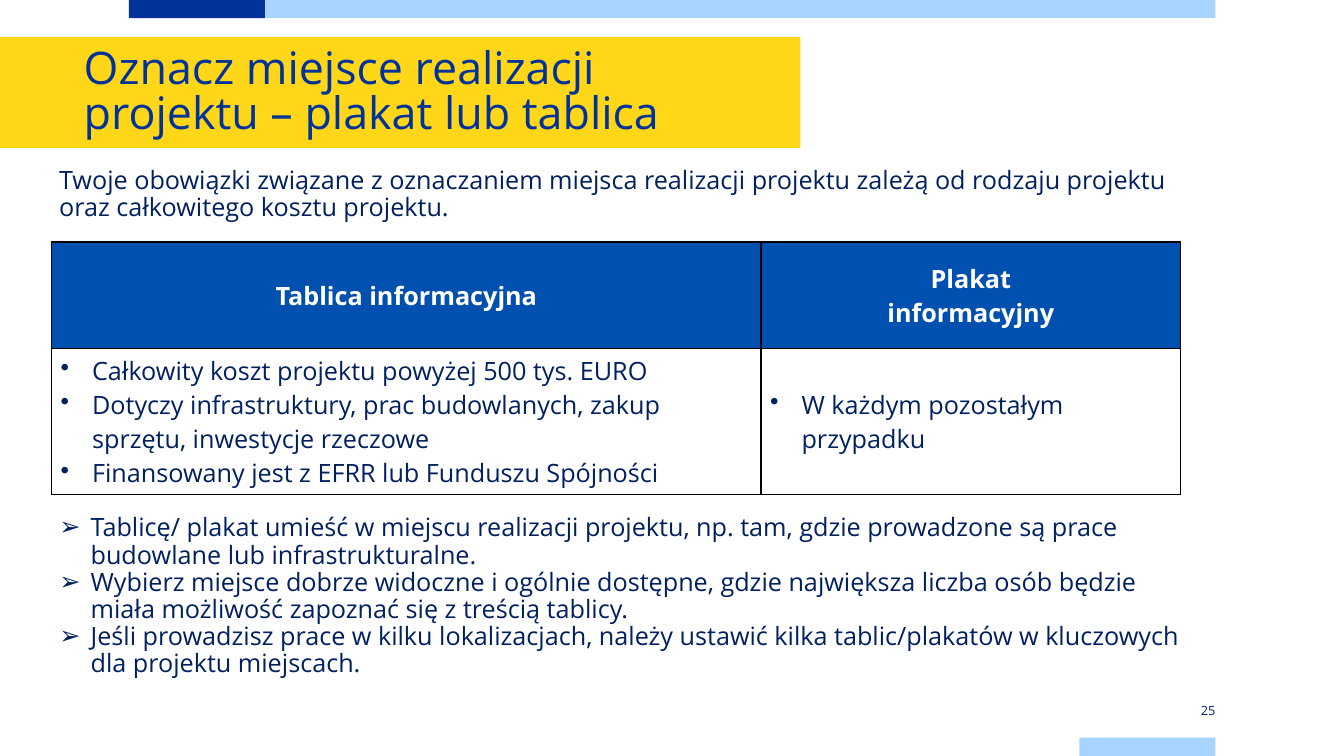
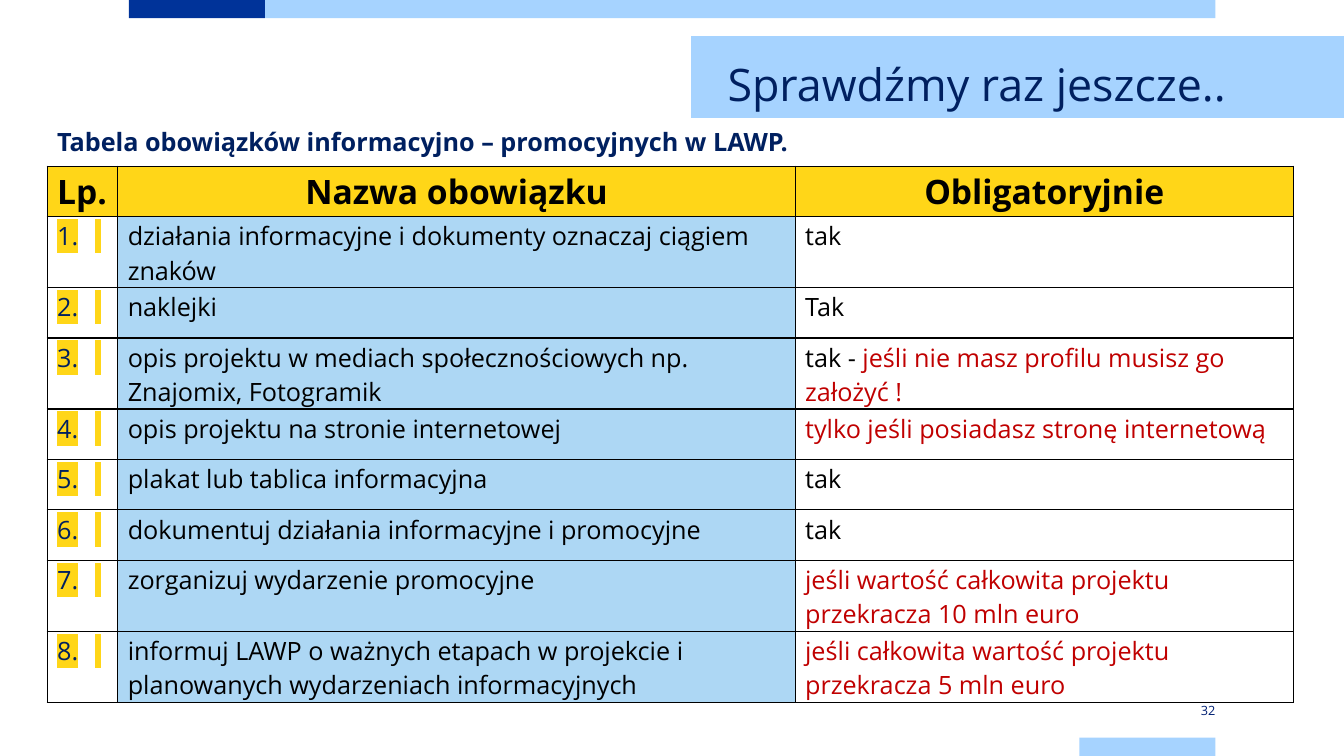
import pptx
import pptx.dml.color
import pptx.enum.shapes
import pptx.enum.text
import pptx.oxml
import pptx.oxml.ns
import pptx.util
import lxml.etree

Cm, Pt = pptx.util.Cm, pptx.util.Pt
qn = pptx.oxml.ns.qn
ALIGN = pptx.enum.text.PP_ALIGN
ANCHOR = pptx.enum.text.MSO_ANCHOR

FONT = "Open Sans"
COLOURS = {
    "blue": "003399", "sky": "A6D3FF", "yellow": "FFD618", "navy": "002060",
    "header": "0050B0", "pale": "ADD7F4", "red": "C00000", "number": "002073",
    "white": "FFFFFF", "black": "000000",
}
HANGING = Cm(0.79)
TITLE_ONLY, TITLE_AND_BODY = 5, 1


def rgb(name):
    return pptx.dml.color.RGBColor.from_string(COLOURS[name])


def place(shape, box):
    shape.left, shape.top, shape.width, shape.height = (Cm(v) for v in box)


def hang(paragraph, tag, indent=HANGING, **attributes):
    """Give the paragraph a bullet or number with a hanging indent."""
    properties = paragraph._p.get_or_add_pPr()
    properties.set("marL", str(indent))
    properties.set("indent", str(-indent))
    lxml.etree.SubElement(properties, qn(tag), attributes)


def write(frame, paragraphs, size=18, colour="navy", bold=False, align=ALIGN.LEFT,
          anchor=ANCHOR.TOP, spacing=None, bullet=None, insets=None):
    """Fill a frame; a paragraph is a string or a list of (text, colour) runs."""
    frame.word_wrap = True
    frame.auto_size = pptx.enum.text.MSO_AUTO_SIZE.NONE
    frame.vertical_anchor = anchor
    if insets:
        frame.margin_left, frame.margin_top, frame.margin_right, frame.margin_bottom = (
            Cm(v) for v in insets)
    write_paragraphs(frame, paragraphs, size, colour, bold, align, spacing, bullet)


def write_paragraphs(frame, paragraphs, size=18, colour="navy", bold=False,
                     align=ALIGN.LEFT, spacing=None, bullet=None):
    for index, content in enumerate(paragraphs):
        paragraph = frame.add_paragraph() if index else frame.paragraphs[0]
        if bullet:
            hang(paragraph, "a:buChar", char=bullet)
        paragraph.alignment = align
        paragraph.space_before = Pt(0)
        if spacing:
            paragraph.line_spacing = spacing
        runs = [(content, colour)] if isinstance(content, str) else content
        for text, run_colour in runs:
            run = paragraph.add_run()
            run.text = text
            run.font.size, run.font.bold, run.font.name = Pt(size), bold, FONT
            run.font.color.rgb = rgb(run_colour)


def add_band(slide, box, colour):
    band = slide.shapes.add_shape(pptx.enum.shapes.MSO_SHAPE.RECTANGLE,
                                  *(Cm(v) for v in box))
    band.shadow.inherit = False
    band.fill.solid()
    band.fill.fore_color.rgb = rgb(colour)
    band.line.fill.background()
    return band


def add_text(slide, box, text, **style):
    frame = slide.shapes.add_textbox(*(Cm(v) for v in box)).text_frame
    write(frame, [text], **style)


def add_title(slide, box, band_colour, text, offset, **style):
    """Coloured band with the title placed inside it."""
    left, top, width, height = box
    band = add_band(slide, box, band_colour)
    title = slide.shapes.title
    title.element.addprevious(band.element)
    place(title, (left + offset[0], top + offset[1],
                  width - offset[0] - offset[2], height - offset[1]))
    write(title.text_frame, [text], size=32, **style)


def add_page_number(slide, number):
    add_text(slide, (27.2, 17.68, 3.43, 0.46), str(number), size=9.1, colour="number",
             align=ALIGN.RIGHT, anchor=ANCHOR.MIDDLE, insets=(0, 0.2, 0, 0.2))


def add_master_bands(prs, slide):
    """Bands shared by all slides, kept on the slide master behind its placeholders."""
    tree = prs.slide_master.shapes.element
    for position, (box, colour) in enumerate([
            ((3.25, 0, 3.43, 0.46), "blue"),
            ((6.68, 0, 23.95, 0.46), "sky"),
            ((27.2, 18.59, 3.43, 0.46), "sky")]):
        tree.insert(2 + position, add_band(slide, box, colour).element)


# Tables
def add_grid(slide, corner, widths, heights):
    table = slide.shapes.add_table(
        len(heights), len(widths), *(Cm(v) for v in corner),
        Cm(sum(widths)), Cm(sum(heights))).table
    table.first_row = table.horz_banding = False
    for column, width in zip(table.columns, widths):
        column.width = Cm(width)
    for row, height in zip(table.rows, heights):
        row.height = Cm(height)
    return table


def fill_cell(cell, fill, paragraphs, margins=(0.23, 0.11, 0.23, 0.11),
              anchor=ANCHOR.TOP, **style):
    cell.margin_left, cell.margin_top, cell.margin_right, cell.margin_bottom = (
        Cm(v) for v in margins)
    cell.vertical_anchor = anchor
    cell.fill.solid()
    cell.fill.fore_color.rgb = rgb(fill)
    properties = cell._tc.get_or_add_tcPr()
    for position, side in enumerate("LRTB"):
        properties.insert(position, pptx.oxml.parse_xml(
            f'<a:ln{side} xmlns:a="{pptx.oxml.ns.nsuri("a")}" w="12700"><a:solidFill>'
            f'<a:srgbClr val="{COLOURS["black"]}"/></a:solidFill></a:ln{side}>'))
    write_paragraphs(cell.text_frame, paragraphs, **style)


def add_board_table(slide, corner):
    table = add_grid(slide, corner, (17.88, 10.57), (2.69, 3.63))
    columns = [
        (["Tablica informacyjna"],
         ["Całkowity koszt projektu powyżej 500 tys. EURO",
          "Dotyczy infrastruktury, prac budowlanych, zakup sprzętu, inwestycje rzeczowe",
          "Finansowany jest z EFRR lub Funduszu Spójności"]),
        (["Plakat", "informacyjny"],
         ["W każdym pozostałym przypadku"]),
    ]
    for index, (heading, conditions) in enumerate(columns):
        fill_cell(table.cell(0, index), "header", heading, anchor=ANCHOR.MIDDLE,
                  colour="white", bold=True, align=ALIGN.CENTER)
        fill_cell(table.cell(1, index), "white", conditions, anchor=ANCHOR.MIDDLE,
                  bullet="•")


def number_cell(cell, number, margins):
    """Automatic row number on a yellow highlight."""
    fill_cell(cell, "white", [" "], margins)
    paragraph = cell.text_frame.paragraphs[0]
    hang(paragraph, "a:buAutoNum", indent=Cm(0.95), type="arabicPeriod",
         startAt=str(number))
    properties = paragraph.runs[0].font._element
    properties.find(qn("a:latin")).addprevious(pptx.oxml.parse_xml(
        f'<a:highlight xmlns:a="{pptx.oxml.ns.nsuri("a")}">'
        f'<a:srgbClr val="{COLOURS["yellow"]}"/></a:highlight>'))


def add_duty_table(slide, corner):
    duties = [
        ("działania informacyjne i dokumenty oznaczaj ciągiem znaków", "tak"),
        ("naklejki", "Tak"),
        ("opis projektu w mediach społecznościowych np. Znajomix, Fotogramik",
         [("tak - ", "black"), ("jeśli nie masz profilu musisz go założyć !", "red")]),
        ("opis projektu na stronie internetowej",
         [("tylko jeśli posiadasz stronę internetową", "red")]),
        ("plakat lub tablica informacyjna", "tak"),
        ("dokumentuj działania informacyjne i promocyjne", "tak"),
        ("zorganizuj wydarzenie promocyjne",
         [("jeśli wartość całkowita projektu przekracza 10 mln euro", "red")]),
        ("informuj LAWP o ważnych etapach w projekcie i planowanych wydarzeniach "
         "informacyjnych",
         [("jeśli całkowita wartość projektu przekracza 5 mln euro", "red")]),
    ]
    margins = (0.25, 0.06, 0.25, 0)
    table = add_grid(slide, corner, (1.78, 17.07, 12.55), [1.27] * (len(duties) + 1))
    headings = [("Lp.", ALIGN.LEFT), ("Nazwa obowiązku", ALIGN.CENTER),
                ("Obligatoryjnie", ALIGN.CENTER)]
    for index, (heading, align) in enumerate(headings):
        fill_cell(table.cell(0, index), "yellow", [heading], margins, size=24,
                  colour="black", bold=True, align=align)
    for row, (duty, required) in enumerate(duties, 1):
        number_cell(table.cell(row, 0), row, margins)
        fill_cell(table.cell(row, 1), "pale", [duty], margins, colour="black")
        fill_cell(table.cell(row, 2), "white", [required], margins, colour="black")


# Slides
def build_marking_slide(slide):
    add_title(slide, (0, 0.93, 20.17, 2.8), "yellow",
              "Oznacz miejsce realizacji projektu – plakat lub tablica",
              offset=(2.11, 0.26, 0.51), colour="blue", spacing=Pt(32.7),
              insets=(0, 0, 0, 0))
    add_text(slide, (1.24, 4.09, 28.42, 1.8),
             "Twoje obowiązki związane z oznaczaniem miejsca realizacji projektu zależą "
             "od rodzaju projektu oraz całkowitego kosztu projektu.", spacing=0.9)
    add_board_table(slide, (1.3, 6.1))
    guidelines = slide.placeholders[1]
    place(guidelines, (1.24, 12.85, 29.36, 4.88))
    write(guidelines.text_frame, [
        "Tablicę/ plakat umieść w miejscu realizacji projektu, np. tam, gdzie "
        "prowadzone są prace budowlane lub infrastrukturalne.",
        "Wybierz miejsce dobrze widoczne i ogólnie dostępne, gdzie największa liczba "
        "osób będzie miała możliwość zapoznać się z treścią tablicy.",
        "Jeśli prowadzisz prace w kilku lokalizacjach, należy ustawić kilka "
        "tablic/plakatów w kluczowych dla projektu miejscach.",
    ], bullet="➢", spacing=0.9)
    add_page_number(slide, 25)


def build_summary_slide(slide):
    add_title(slide, (17.42, 0.91, 16.45, 2.06), "sky", "Sprawdźmy raz jeszcze..",
              offset=(0.66, 0.18, 0), spacing=1.15)
    add_text(slide, (1.19, 3.15, 20.24, 1), "Tabela obowiązków informacyjno – "
             "promocyjnych w LAWP.", bold=True, spacing=0.9)
    add_duty_table(slide, (1.19, 4.19))
    add_page_number(slide, 32)


def main():
    prs = pptx.Presentation()
    prs.slide_width, prs.slide_height = Cm(33.87), Cm(19.05)
    marking = prs.slides.add_slide(prs.slide_layouts[TITLE_AND_BODY])
    add_master_bands(prs, marking)
    build_marking_slide(marking)
    build_summary_slide(prs.slides.add_slide(prs.slide_layouts[TITLE_ONLY]))
    prs.save("out.pptx")


if __name__ == "__main__":
    main()
